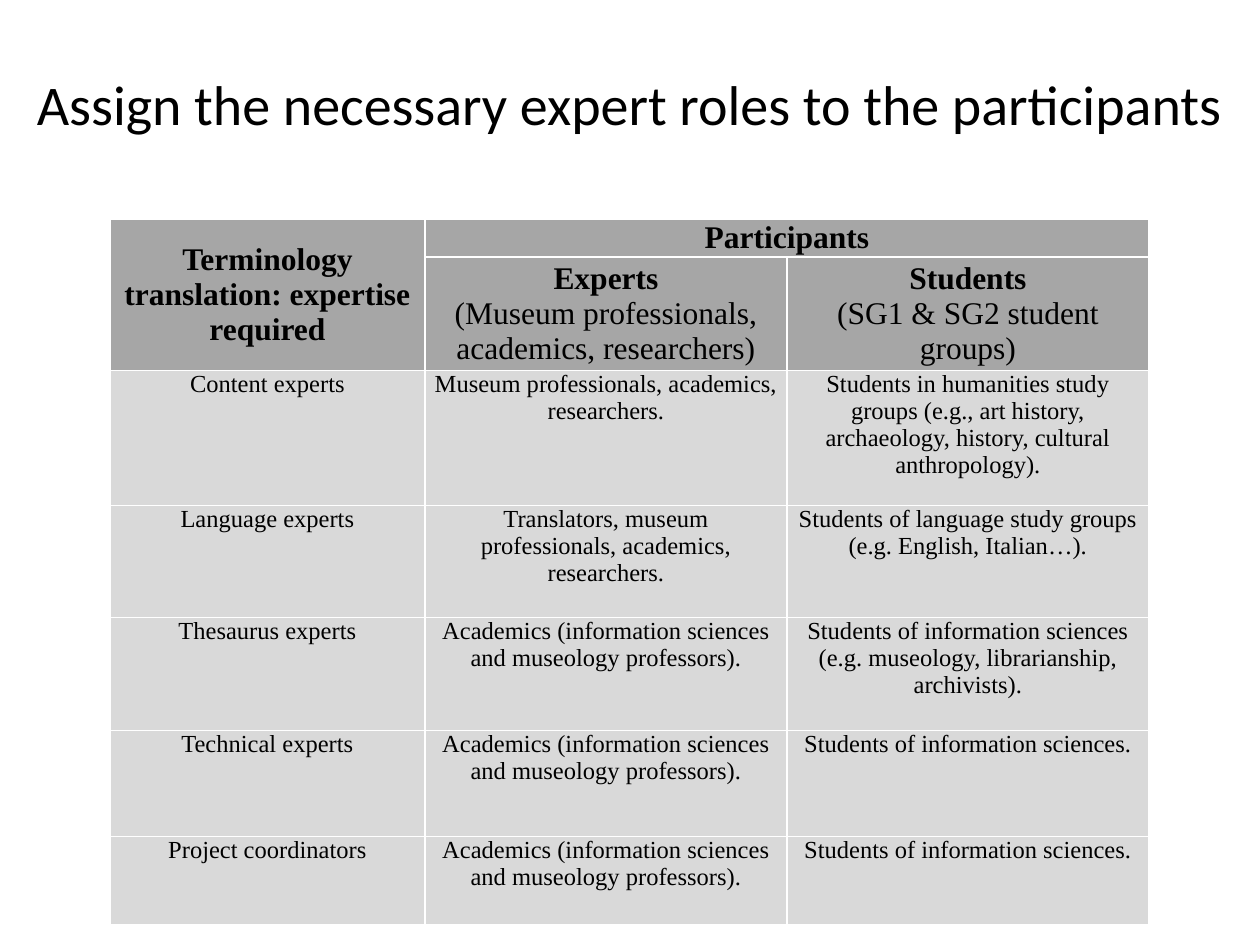
from dataclasses import dataclass

from lxml import etree
from pptx import Presentation
from pptx.dml.color import RGBColor
from pptx.enum.text import MSO_ANCHOR, PP_ALIGN
from pptx.oxml.ns import qn
from pptx.util import Emu, Pt

MIDDLE, TOP = MSO_ANCHOR.MIDDLE, MSO_ANCHOR.TOP
CENTER = PP_ALIGN.CENTER

TITLE = "Assign the necessary expert roles to the participants"
HEADER = [
    ["Terminology translation: expertise required", "Participants", ""],
    ["", "Experts\v(Museum professionals, academics, researchers)",
     "Students\v(SG1 & SG2 student groups)"],
]
PROFESSORS = "Academics (information sciences and museology professors)."
ROLES = [
    ["Content experts", "Museum professionals, academics, researchers.",
     "Students in humanities study groups (e.g., art history, archaeology, "
     "history, cultural anthropology)."],
    ["Language experts", "Translators, museum professionals, academics, researchers.",
     "Students of language study groups (e.g. English, Italian…)."],
    ["Thesaurus experts", PROFESSORS,
     "Students of information sciences (e.g. museology, librarianship, archivists)."],
    ["Technical experts", PROFESSORS, "Students of information sciences."],
    ["Project coordinators", PROFESSORS, "Students of information sciences."],
]

SLIDE_SIZE = (1260, 945)
TITLE_BOX = (21, 24, 1218, 158)
TABLE_CORNER = (110, 219)
COLUMN_WIDTHS = [315, 362, 362]
ROW_HEIGHTS = [38, 113, 135, 112, 113, 106, 88]
CELL_INSET = 9


@dataclass(frozen=True)
class Theme:
    text: str = "000000"
    border: str = "FFFFFF"
    header_fill: str = "A6A6A6"
    role_fill: str = "D9D9D9"
    title_font: str = "Calibri"
    table_font: str = "Times New Roman"
    title_size: int = 32
    header_size: int = 18
    role_size: int = 14
    border_width: int = 1


THEME = Theme()


def px(value):
    return Emu(round(value * 914400 / 126))


def style_run(run, font_name, size, bold=False):
    run.font.name = font_name
    run.font.size = Pt(size)
    run.font.bold = bold
    run.font.color.rgb = RGBColor.from_string(THEME.text)


def add_borders(cell):
    properties = cell._tc.get_or_add_tcPr()
    for position, side in enumerate(("lnL", "lnR", "lnT", "lnB")):
        line = etree.Element(qn(f"a:{side}"), w=str(Pt(THEME.border_width)))
        fill = etree.SubElement(line, qn("a:solidFill"))
        etree.SubElement(fill, qn("a:srgbClr"), val=THEME.border)
        properties.insert(position, line)


def fill_cell(cell, text, is_header):
    cell.fill.solid()
    cell.fill.fore_color.rgb = RGBColor.from_string(
        THEME.header_fill if is_header else THEME.role_fill)
    cell.margin_left = cell.margin_right = px(CELL_INSET)
    cell.margin_top = cell.margin_bottom = 0
    cell.vertical_anchor = MIDDLE if is_header else TOP
    add_borders(cell)
    cell.text_frame.text = text
    paragraph = cell.text_frame.paragraphs[0]
    paragraph.alignment = CENTER
    size = THEME.header_size if is_header else THEME.role_size
    for index, run in enumerate(paragraph.runs):
        style_run(run, THEME.table_font, size, bold=is_header and index == 0)


def add_title(slide):
    frame = slide.shapes.add_textbox(*map(px, TITLE_BOX)).text_frame
    frame.word_wrap = True
    frame.vertical_anchor = MIDDLE
    frame.text = TITLE
    frame.paragraphs[0].alignment = CENTER
    style_run(frame.paragraphs[0].runs[0], THEME.title_font, THEME.title_size)


def add_roles_table(slide):
    rows = HEADER + ROLES
    table = slide.shapes.add_table(
        len(rows), len(COLUMN_WIDTHS), *map(px, TABLE_CORNER),
        px(sum(COLUMN_WIDTHS)), px(sum(ROW_HEIGHTS))).table
    table.horz_banding = False
    for column, width in zip(table.columns, COLUMN_WIDTHS):
        column.width = px(width)
    for row, height in zip(table.rows, ROW_HEIGHTS):
        row.height = px(height)
    for r, texts in enumerate(rows):
        for c, text in enumerate(texts):
            fill_cell(table.cell(r, c), text, is_header=r < len(HEADER))
    table.cell(0, 0).merge(table.cell(1, 0))
    table.cell(0, 1).merge(table.cell(0, 2))


def main():
    presentation = Presentation()
    presentation.slide_width, presentation.slide_height = map(px, SLIDE_SIZE)
    slide = presentation.slides.add_slide(presentation.slide_layouts[6])
    add_title(slide)
    add_roles_table(slide)
    presentation.save("out.pptx")


if __name__ == "__main__":
    main()
